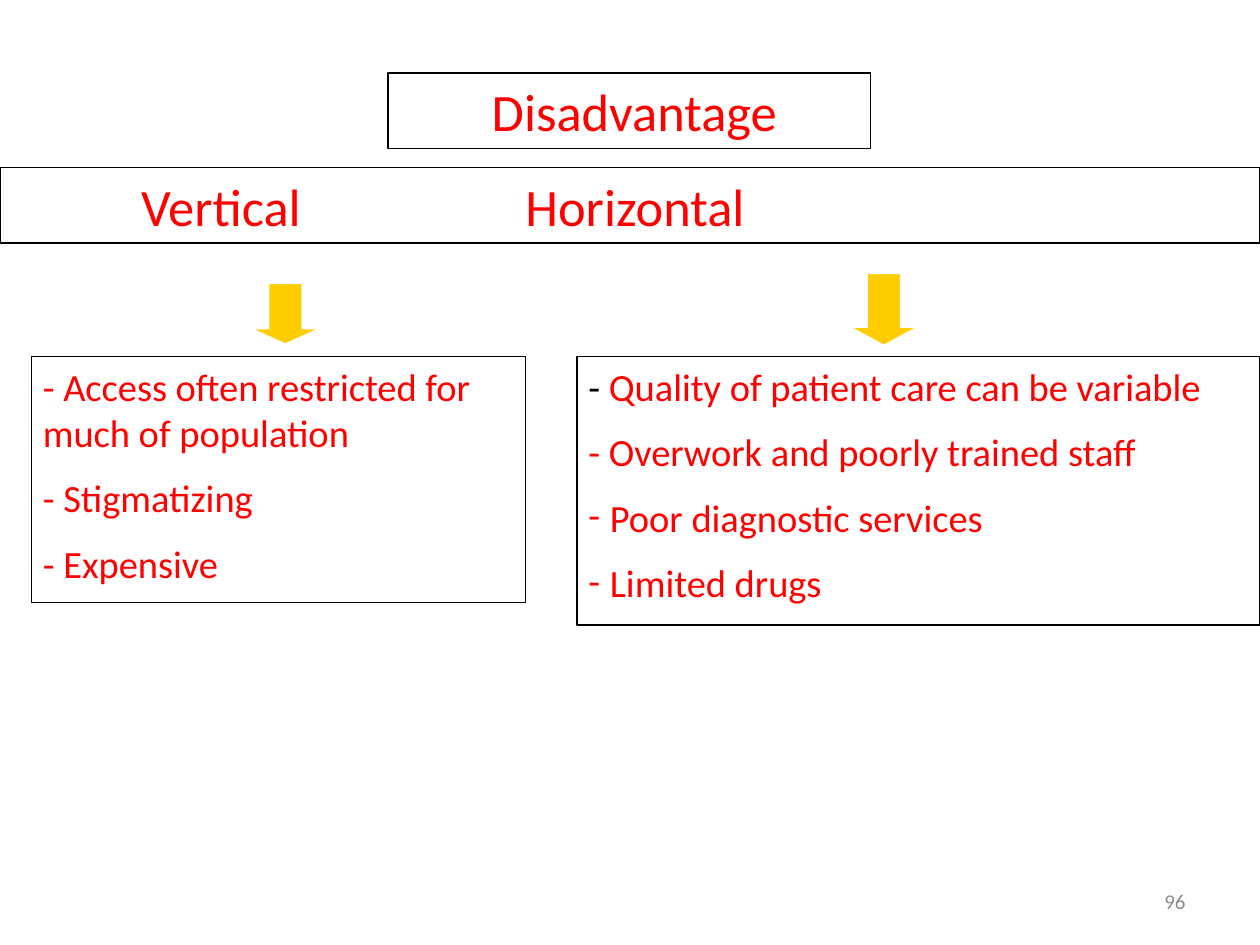
from pptx import Presentation
from pptx.dml.color import RGBColor
from pptx.enum.shapes import MSO_SHAPE
from pptx.enum.text import MSO_ANCHOR, MSO_AUTO_SIZE, PP_ALIGN
from pptx.oxml.xmlchemy import OxmlElement
from pptx.util import Inches, Pt

LEFT, CENTER, RIGHT = PP_ALIGN.LEFT, PP_ALIGN.CENTER, PP_ALIGN.RIGHT
TOP, MIDDLE = MSO_ANCHOR.TOP, MSO_ANCHOR.MIDDLE
NO_AUTOFIT = MSO_AUTO_SIZE.NONE
DOWN_ARROW = MSO_SHAPE.DOWN_ARROW
TWO_CONTENT_LAYOUT = 3
BLACK, RED, GOLD, WHITE, GRAY = "000000", "FF0000", "FFCC00", "FFFFFF", "8C8C8C"


def color(value):
    return RGBColor.from_string(value)


def add_element(parent, tag, **attributes):
    element = OxmlElement(tag)
    for name, value in attributes.items():
        element.set(name, str(value))
    parent.append(element)
    return element


class SlideBuilder:
    """Hold the slide and its shared style, and draw each kind of element."""

    font = "Calibri"
    line_width = Pt(0.75)
    dash_indent = Inches(0.17)

    def __init__(self, presentation):
        layout = presentation.slide_layouts[TWO_CONTENT_LAYOUT]
        self.slide = presentation.slides.add_slide(layout)

    def outline(self, shape, value):
        shape.line.color.rgb = color(value)
        shape.line.width = self.line_width

    def place(self, shape, box):
        for name, value in zip(("left", "top", "width", "height"), box):
            setattr(shape, name, Inches(value))

    def frame(self, shape, anchor=TOP, margin_left=0.09):
        text_frame = shape.text_frame
        settings = {
            "word_wrap": True,
            "auto_size": NO_AUTOFIT,
            "vertical_anchor": anchor,
            "margin_left": Inches(margin_left),
            "margin_right": Inches(0.09),
            "margin_top": Inches(0.05),
            "margin_bottom": Inches(0.05),
        }
        for name, value in settings.items():
            setattr(text_frame, name, value)
        return text_frame

    def fill_paragraph(self, paragraph, runs, size, align=LEFT, space_before=0):
        settings = {"alignment": align, "space_before": Pt(space_before)}
        for name, value in settings.items():
            setattr(paragraph, name, value)
        for text, value in runs:
            run = paragraph.add_run()
            run.text = text
            for name, setting in {"name": self.font, "size": Pt(size)}.items():
                setattr(run.font, name, setting)
            run.font.color.rgb = color(value)

    def title(self, text, box):
        shape = self.slide.shapes.title
        self.place(shape, box)
        self.outline(shape, BLACK)
        text_frame = self.frame(shape, margin_left=0.17)
        self.fill_paragraph(text_frame.paragraphs[0], [(text, RED)], 30, CENTER)

    def text_box(self, runs, box, size, align=LEFT, anchor=TOP):
        shape = self.slide.shapes.add_textbox(*map(Inches, box))
        paragraph = self.frame(shape, anchor).paragraphs[0]
        self.fill_paragraph(paragraph, runs, size, align)
        return shape

    def heading_bar(self, headings, tab_stops, box):
        text = "".join(f"\t{heading}" for heading in headings)
        shape = self.text_box([(text, RED)], box, 30)
        self.outline(shape, BLACK)
        properties = shape.text_frame.paragraphs[0]._p.get_or_add_pPr()
        tab_list = add_element(properties, "a:tabLst")
        for position in tab_stops:
            add_element(tab_list, "a:tab", pos=Inches(position), algn="l")

    def dash_list(self, placeholder_index, items, box):
        shape = self.slide.placeholders[placeholder_index]
        self.place(shape, box)
        self.outline(shape, BLACK)
        text_frame = self.frame(shape)
        for index, (runs, bulleted) in enumerate(items):
            paragraph = text_frame.add_paragraph() if index else text_frame.paragraphs[0]
            self.fill_paragraph(paragraph, runs, 22, space_before=11 if index else 0)
            properties = paragraph._p.get_or_add_pPr()
            indent = self.dash_indent if bulleted else 0
            properties.set("marL", str(indent))
            properties.set("indent", str(-indent))
            if bulleted:
                add_element(properties, "a:buFont", typeface=self.font)
                add_element(properties, "a:buChar", char="-")
            else:
                add_element(properties, "a:buNone")

    def down_arrow(self, box, head):
        shape = self.slide.shapes.add_shape(DOWN_ARROW, *map(Inches, box))
        shape.shadow.inherit = False
        shape.adjustments[1] = head
        shape.fill.solid()
        shape.fill.fore_color.rgb = color(GOLD)
        self.outline(shape, WHITE)


def main():
    presentation = Presentation()
    presentation.slide_width, presentation.slide_height = Inches(10), Inches(7.5)
    builder = SlideBuilder(presentation)
    builder.title("Disadvantage", (3.08, 0.58, 3.83, 0.6))
    builder.heading_bar(("Vertical", "Horizontal"), (1.03, 4.08), (0, 1.33, 10, 0.6))
    vertical_items = [
        ([("- Access often restricted for much of population", RED)], False),
        ([("- Stigmatizing", RED)], False),
        ([("- Expensive", RED)], False),
    ]
    horizontal_items = [
        ([("- ", BLACK), ("Quality of patient care can be variable", RED)], False),
        ([("- Overwork and poorly trained staff", RED)], False),
        ([("Poor diagnostic services", RED)], True),
        ([("Limited drugs", RED)], True),
    ]
    builder.dash_list(1, vertical_items, (0.25, 2.83, 3.92, 1.95))
    builder.dash_list(2, horizontal_items, (4.58, 2.83, 5.42, 2.13))
    builder.down_arrow((6.75, 2.17, 0.53, 0.57), 0.27)
    builder.down_arrow((2, 2.25, 0.53, 0.48), 0.25)
    builder.text_box([("96", GRAY)], (7.17, 6.95, 2.33, 0.4), 12, RIGHT, MIDDLE)
    presentation.save("out.pptx")


if __name__ == "__main__":
    main()
